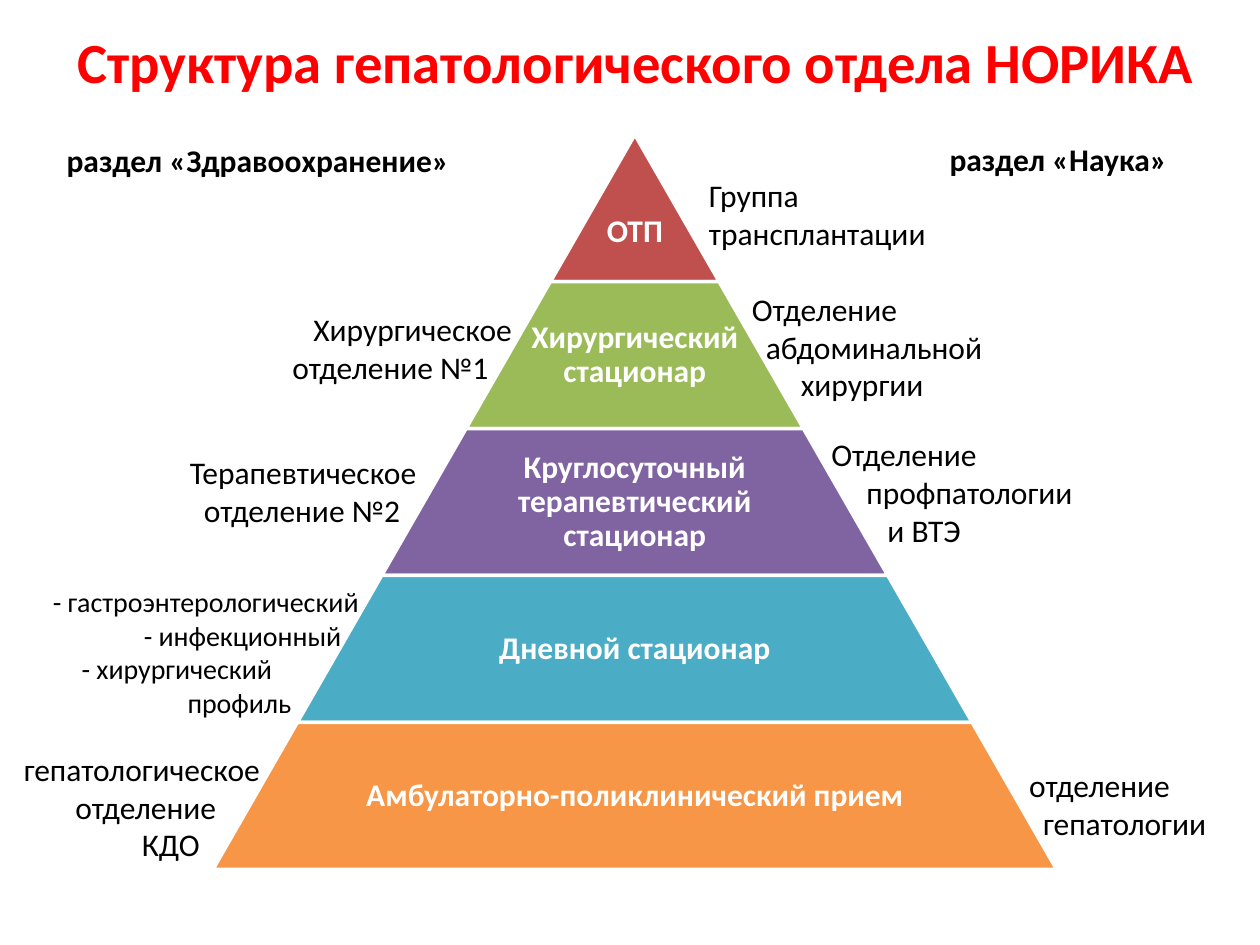
from dataclasses import dataclass

from pptx import Presentation
from pptx.dml.color import RGBColor
from pptx.enum.shapes import MSO_SHAPE
from pptx.enum.text import MSO_ANCHOR, MSO_AUTO_SIZE, PP_ALIGN
from pptx.util import Pt

TRAPEZOID = MSO_SHAPE.TRAPEZOID
TOP, MIDDLE = MSO_ANCHOR.TOP, MSO_ANCHOR.MIDDLE
LEFT, CENTER = PP_ALIGN.LEFT, PP_ALIGN.CENTER
NO_AUTOFIT = MSO_AUTO_SIZE.NONE

FONT = "Calibri"
APEX_X, APEX_Y = 362.75, 77
LEVEL_HEIGHT = 83.95
SIDE_STEP = 48.2
LABEL_SHARE = 0.65


@dataclass(frozen=True)
class Level:
    text: str
    fill: str
    drop: float = 0


@dataclass(frozen=True)
class Note:
    left: float
    top: float
    width: float
    height: float
    text: str
    indents: tuple[float, ...] = (0,)
    size: float = 18
    bold: bool = False


LEVELS = [
    Level("ОТП", "C0504D", drop=14),
    Level("Хирургический стационар", "9BBB59"),
    Level("Круглосуточный терапевтический стационар", "8064A2"),
    Level("Дневной стационар", "4BACC6"),
    Level("Амбулаторно-поликлинический прием", "F79646"),
]

NOTES = [
    Note(31, 77, 236, 73, "раздел «Здравоохранение»", bold=True),
    Note(535.5, 76.5, 142, 29, "раздел «Наука»", bold=True),
    Note(581, 434, 121, 51, "отделение\nгепатологии", (0, 8)),
    Note(-25, 425, 190, 94, "гепатологическое\nотделение\nКДО", (31.5, 61, 99)),
    Note(-14.4, 330.5, 233, 107,
         "- гастроэнтерологический\n- инфекционный\n- хирургический\nпрофиль",
         (37.5, 89.5, 54, 114.5), size=16),
    Note(422.5, 162, 170, 73, "Отделение\nабдоминальной\nхирургии", (0, 8, 28)),
    Note(468, 245, 157, 73, "Отделение\nпрофпатологии\nи ВТЭ", (0, 20, 32)),
    Note(132, 173.5, 174, 51, "Хирургическое\nотделение №1", (40, 28)),
    Note(81.5, 255.5, 174, 51, "Терапевтическое\nотделение №2", (20, 28)),
    Note(398, 97, 170, 51, "Группа трансплантации"),
]


def color(value: str) -> RGBColor:
    return RGBColor.from_string(value)


def write(frame, text: str, *, size: float = 18, ink: str = "000000",
          bold: bool = False, align=LEFT, anchor=TOP, spacing: float = 1.0,
          inset: float | None = None, indents: tuple[float, ...] = (0,)) -> None:
    frame.word_wrap = True
    frame.auto_size = NO_AUTOFIT
    frame.vertical_anchor = anchor
    if inset is not None:
        frame.margin_left = frame.margin_right = Pt(inset)
        frame.margin_top = frame.margin_bottom = Pt(inset)
    frame.text = text
    for paragraph, indent in zip(frame.paragraphs, indents):
        paragraph.alignment = align
        paragraph.line_spacing = spacing
        if indent:
            paragraph._p.get_or_add_pPr().set("marL", str(Pt(indent)))
        font = paragraph.runs[0].font
        font.name, font.size, font.bold = FONT, Pt(size), bold
        font.color.rgb = color(ink)


def draw_level(shapes, level: Level, index: int) -> None:
    width = 2 * SIDE_STEP * (index + 1)
    top = APEX_Y + LEVEL_HEIGHT * index
    tier = shapes.add_shape(TRAPEZOID, Pt(APEX_X - width / 2), Pt(top),
                            Pt(width), Pt(LEVEL_HEIGHT))
    tier.adjustments[0] = SIDE_STEP / LEVEL_HEIGHT
    tier.shadow.inherit = False
    tier.fill.solid()
    tier.fill.fore_color.rgb = color(level.fill)
    tier.line.color.rgb = color("FFFFFF")
    tier.line.width = Pt(2)

    label_width = width * (LABEL_SHARE if index else 1)
    label = shapes.add_textbox(Pt(APEX_X - label_width / 2), Pt(top + level.drop),
                               Pt(label_width), Pt(LEVEL_HEIGHT))
    write(label.text_frame, level.text, ink="FFFFFF", bold=True, align=CENTER,
          anchor=MIDDLE, spacing=0.9, inset=2)


def draw_note(shapes, note: Note) -> None:
    box = shapes.add_textbox(Pt(note.left), Pt(note.top), Pt(note.width), Pt(note.height))
    write(box.text_frame, note.text, size=note.size, bold=note.bold, indents=note.indents)


def main() -> None:
    deck = Presentation()
    deck.slide_width, deck.slide_height = Pt(720), Pt(540)
    slide = deck.slides.add_slide(deck.slide_layouts[5])

    title = slide.shapes.title
    title.left, title.top, title.width, title.height = Pt(14.4), Pt(9.4), Pt(698), Pt(51)
    write(title.text_frame, "Структура гепатологического отдела НОРИКА", size=32.4,
          ink="FF0000", bold=True, align=CENTER, anchor=MIDDLE)

    for index, level in enumerate(LEVELS):
        draw_level(slide.shapes, level, index)
    for note in NOTES:
        draw_note(slide.shapes, note)

    deck.save("out.pptx")


if __name__ == "__main__":
    main()
